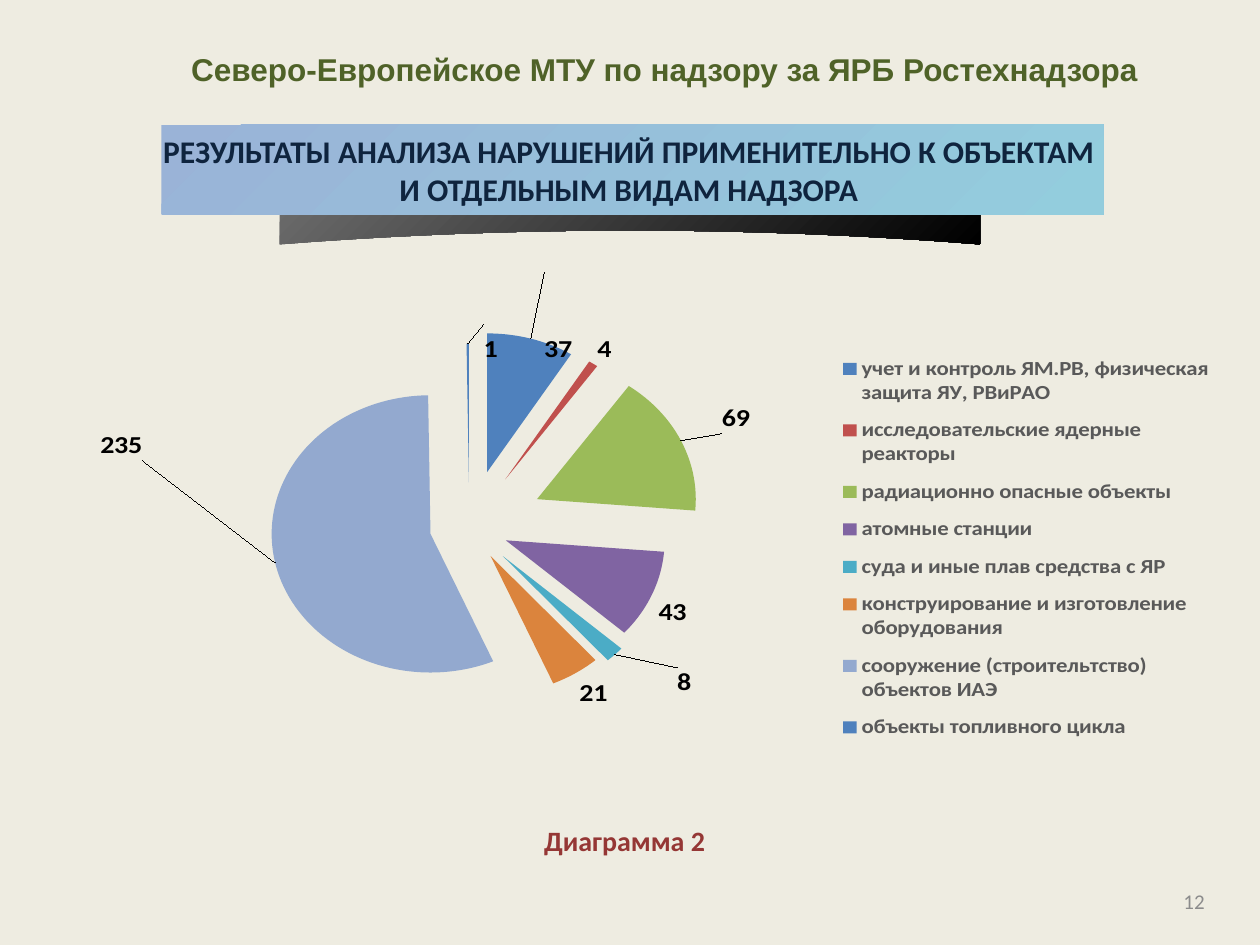
from dataclasses import dataclass

from lxml.etree import SubElement
from pptx import Presentation
from pptx.chart.data import CategoryChartData
from pptx.dml.color import RGBColor
from pptx.enum.chart import XL_CHART_TYPE, XL_LABEL_POSITION, XL_LEGEND_POSITION
from pptx.enum.shapes import MSO_SHAPE
from pptx.enum.text import MSO_ANCHOR, MSO_AUTO_SIZE, PP_ALIGN
from pptx.oxml import parse_xml
from pptx.oxml.ns import nsdecls, qn
from pptx.util import Inches, Pt

COLORS = {
    "background": "EEECE1",
    "heading": "4F6228",
    "banner_start": "9AB3D7",
    "banner_end": "93CDDD",
    "banner_text": "0F243E",
    "arch_start": "6C6C6C",
    "arch_end": "000000",
    "label": "000000",
    "legend": "595959",
    "caption": "953735",
    "number": "8C8C8C",
}


@dataclass(frozen=True)
class Slice:
    name: str
    value: int
    color: str
    explosion: int
    label_shift: tuple[float, float] | None = None


@dataclass(frozen=True)
class Style:
    size: float
    color: str
    bold: bool = True
    name: str = "Calibri"


SLICES = [
    Slice("учет и контроль ЯМ.РВ, физическая защита ЯУ, РВиРАО", 37, "4F81BD", 41, (0.01, -0.14)),
    Slice("исследовательские ядерные реакторы", 4, "C0504D", 41),
    Slice("радиационно опасные объекты", 69, "9BBB59", 47, (0.03, -0.01)),
    Slice("атомные станции", 43, "8064A2", 25),
    Slice("суда и иные плав средства с ЯР", 8, "4BACC6", 30, (0.05, 0.02)),
    Slice("конструирование и изготовление оборудования", 21, "DB843D", 25),
    Slice("сооружение (строительтство) объектов ИАЭ", 235, "93A9CF", 25, (-0.11, -0.31)),
    Slice("объекты топливного цикла", 1, "4F81BD", 32, (0.02, -0.03)),
]
LABEL_STYLE = Style(16, "label")


def rgb(key: str) -> RGBColor:
    return RGBColor.from_string(COLORS[key])


def apply_style(font, style: Style) -> None:
    font.size = Pt(style.size)
    font.bold = style.bold
    font.name = style.name
    font.color.rgb = rgb(style.color)


def place(shape, left: float, top: float, width: float, height: float) -> None:
    shape.left, shape.top = Inches(left), Inches(top)
    shape.width, shape.height = Inches(width), Inches(height)


def write(shape, lines: list[str], style: Style, alignment, anchor, wrap=True) -> None:
    frame = shape.text_frame
    frame.word_wrap = wrap
    frame.auto_size = MSO_AUTO_SIZE.NONE
    frame.vertical_anchor = anchor
    for index, line in enumerate(lines):
        paragraph = frame.paragraphs[0] if index == 0 else frame.add_paragraph()
        paragraph.alignment = alignment
        run = paragraph.add_run()
        run.text = line
        apply_style(run.font, style)


def fill_gradient(shape, start: str, end: str) -> None:
    shape.shadow.inherit = False
    shape.line.fill.background()
    shape.fill.gradient()
    shape.fill.gradient_angle = 315
    for stop, key in zip(shape.fill.gradient_stops, (start, end)):
        stop.color.rgb = rgb(key)


def draw_arch(slide) -> None:
    center, half_width, steps = 5.0, 2.78, 20
    positions = [1 - 2 * step / steps for step in range(steps + 1)]
    curve = [(center + half_width * t, 1.83 + 0.11 * t * t) for t in positions]
    top = [(center - half_width, 1.64), (center, 1.54), (center + half_width, 1.64)]
    points = [(Inches(x), Inches(y)) for x, y in curve + top]
    builder = slide.shapes.build_freeform(*points[0])
    builder.add_line_segments(points[1:], close=True)
    fill_gradient(builder.convert_to_shape(), "arch_start", "arch_end")


def manual_layout(left: float, top: float, width=None, height=None, inner=False):
    layout = parse_xml(f"<c:layout {nsdecls('c')}><c:manualLayout/></c:layout>")
    values = {}
    if inner:
        values["layoutTarget"] = "inner"
    if width is not None:
        values |= {"xMode": "edge", "yMode": "edge"}
    values |= {"x": left, "y": top}
    if width is not None:
        values |= {"w": width, "h": height}
    for tag, value in values.items():
        SubElement(layout[0], qn(f"c:{tag}")).set("val", str(value))
    return layout


def explosion(percent: int):
    return parse_xml(f'<c:explosion {nsdecls("c")} val="{percent}"/>')


def format_slice(series, index: int, item: Slice) -> None:
    point = series.points[index]
    point.format.fill.solid()
    point.format.fill.fore_color.rgb = RGBColor.from_string(item.color)
    point.format.line.fill.background()
    data_point = series._element.findall(qn("c:dPt"))[index]
    data_point.find(qn("c:spPr")).addprevious(explosion(item.explosion))
    apply_style(point.data_label.font, LABEL_STYLE)
    point.data_label.position = XL_LABEL_POSITION.OUTSIDE_END
    if item.label_shift:
        label = series._element.find(qn("c:dLbls")).findall(qn("c:dLbl"))[index]
        label.find(qn("c:idx")).addnext(manual_layout(*item.label_shift))


def draw_chart(slide) -> None:
    data = CategoryChartData()
    data.categories = [item.name for item in SLICES]
    data.add_series("Series 1", [item.value for item in SLICES])
    chart = slide.shapes.add_chart(
        XL_CHART_TYPE.PIE, Inches(0.66), Inches(2.16), Inches(9.07), Inches(3.92), data
    ).chart
    chart.has_title = False
    apply_style(chart.font, Style(10, "label", False))

    chart.has_legend = True
    legend = chart.legend
    legend.position = XL_LEGEND_POSITION.RIGHT
    legend.include_in_layout = False
    apply_style(legend.font, Style(13, "legend"))
    for old_layout in legend._element.findall(qn("c:layout")):
        legend._element.remove(old_layout)
    legend._element.find(qn("c:legendPos")).addnext(manual_layout(0.66, 0.02, 0.33, 0.95))

    plot = chart.plots[0]
    plot.vary_by_categories = True
    plot_area = plot._element.getparent()
    for old_layout in plot_area.findall(qn("c:layout")):
        plot_area.remove(old_layout)
    plot_area.insert(0, manual_layout(0.065, 0.043, 0.546, 0.804, inner=True))

    series = plot.series[0]
    labels = series.data_labels
    labels.show_value = True
    labels.position = XL_LABEL_POSITION.OUTSIDE_END
    apply_style(labels.font, LABEL_STYLE)
    for index, item in enumerate(SLICES):
        format_slice(series, index, item)
    series._element.find(qn("c:dPt")).addprevious(explosion(25))


def add_text(slide, box: tuple, text: str, style: Style, alignment, anchor, wrap=True) -> None:
    shape = slide.shapes.add_textbox(*(Inches(length) for length in box))
    write(shape, [text], style, alignment, anchor, wrap)


def main() -> None:
    presentation = Presentation()
    presentation.slide_width, presentation.slide_height = Inches(10), Inches(7.5)
    slide = presentation.slides.add_slide(presentation.slide_layouts[5])
    slide.background.fill.solid()
    slide.background.fill.fore_color.rgb = rgb("background")

    title = slide.shapes.title
    place(title, 1.3, 0.38, 7.95, 0.37)
    write(title, ["Северо-Европейское МТУ по надзору за ЯРБ Ростехнадзора"],
          Style(18, "heading", name="Arial"), PP_ALIGN.CENTER, MSO_ANCHOR.TOP)
    title.text_frame.paragraphs[0].line_spacing = 0.9

    draw_arch(slide)
    banner = slide.shapes.add_shape(
        MSO_SHAPE.RECTANGLE, Inches(1.28), Inches(0.99), Inches(7.48), Inches(0.71)
    )
    fill_gradient(banner, "banner_start", "banner_end")
    write(banner, ["РЕЗУЛЬТАТЫ АНАЛИЗА НАРУШЕНИЙ ПРИМЕНИТЕЛЬНО К ОБЪЕКТАМ ",
                   "И ОТДЕЛЬНЫМ ВИДАМ НАДЗОРА "],
          Style(18, "banner_text"), PP_ALIGN.CENTER, MSO_ANCHOR.MIDDLE, wrap=False)

    draw_chart(slide)
    add_text(slide, (7.33, 6.95, 2.33, 0.4), "12", Style(12, "number", False),
             PP_ALIGN.RIGHT, MSO_ANCHOR.MIDDLE)
    add_text(slide, (4.22, 6.49, 1.49, 0.37), "Диаграмма 2", Style(16, "caption"),
             PP_ALIGN.LEFT, MSO_ANCHOR.TOP, wrap=False)
    presentation.save("out.pptx")


if __name__ == "__main__":
    main()
